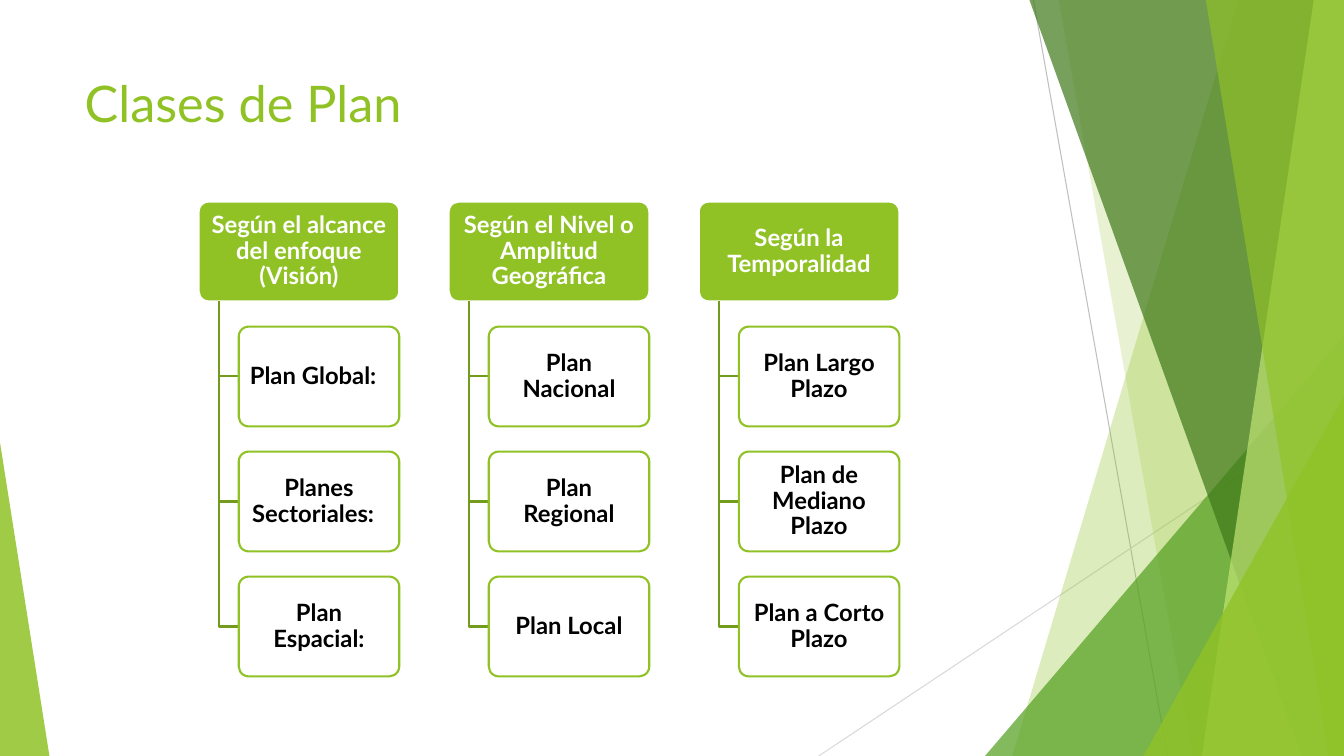
from collections import namedtuple
from dataclasses import dataclass

from lxml.etree import SubElement
from pptx import Presentation
from pptx.dml.color import RGBColor
from pptx.enum.shapes import MSO_CONNECTOR, MSO_SHAPE
from pptx.enum.text import MSO_ANCHOR, PP_ALIGN
from pptx.oxml.ns import qn
from pptx.util import Inches, Pt

Box = namedtuple("Box", "left top width height")


@dataclass(frozen=True)
class Theme:
    """Colours, font and type sizes of the slide."""
    font: str = "Lato"
    green: str = "90C226"
    leaf: str = "54A021"
    forest: str = "3F7819"
    lime: str = "C0E474"
    branch: str = "739B1E"
    white: str = "FFFFFF"
    black: str = "000000"
    ray_dark: str = "BFBFBF"
    ray_light: str = "D9D9D9"
    title_size: int = 36
    label_size: int = 17
    ray_width: float = 0.75
    border_width: float = 1.5


THEME = Theme()

PLAN_CLASSES = [
    ("Según el alcance del enfoque (Visión)",
     ["Plan Global:  ", "Planes Sectoriales:  ", "Plan Espacial:"]),
    ("Según el Nivel o Amplitud Geográfica",
     ["Plan Nacional", "Plan Regional", "Plan Local"]),
    ("Según la Temporalidad",
     ["Plan Largo Plazo", "Plan de Mediano Plazo", "Plan a Corto Plazo"]),
]


def apply(target, formats):
    """Set each attribute in formats on target."""
    for name, value in formats.items():
        setattr(target, name, value)


def paint(shape, colour, opacity=100):
    """Fill a shape with a colour at an opacity in percent."""
    shape.shadow.inherit = False
    shape.fill.solid()
    shape.fill.fore_color.rgb = RGBColor.from_string(colour)
    if opacity < 100:
        tint = shape._element.spPr.find(qn("a:solidFill")).find(qn("a:srgbClr"))
        SubElement(tint, qn("a:alpha")).set("val", str(opacity * 1000))


def stroke(shape, colour, width):
    """Give a shape or connector a solid line."""
    shape.line.color.rgb = RGBColor.from_string(colour)
    shape.line.width = Pt(width)


def outline(shapes, points, close):
    """Draw a freeform through points given in inches."""
    corners = [(Inches(x), Inches(y)) for x, y in points]
    builder = shapes.build_freeform(*corners[0], scale=1.0)
    builder.add_line_segments(corners[1:], close=close)
    return builder.convert_to_shape()


def preset(shapes, kind, box, adjustment):
    """Add an adjustable preset shape in a box given in inches."""
    shape = shapes.add_shape(kind, *map(Inches, box))
    shape.adjustments[0] = adjustment
    return shape


def add_ray(shapes, start, end, colour):
    """Draw one thin background line."""
    ray = shapes.add_connector(MSO_CONNECTOR.STRAIGHT, *map(Inches, start + end))
    stroke(ray, colour, THEME.ray_width)
    SubElement(ray._element.spPr, qn("a:effectLst"))


def add_band(shapes, box, top_left, top_right, bottom_left, colour, opacity):
    """Draw a translucent band that reaches the right edge of the box."""
    right, bottom = box.left + box.width, box.top + box.height
    band = outline(shapes, [(box.left + top_left, box.top), (box.left + top_right, box.top),
                            (right, bottom), (box.left + bottom_left, bottom)], True)
    paint(band, colour, opacity)
    band.line.fill.background()


def add_peak(shapes, box, left, width, height, apex, colour, opacity):
    """Draw a translucent triangle standing on the bottom of the box."""
    peak = preset(shapes, MSO_SHAPE.ISOSCELES_TRIANGLE,
                  Box(box.left + left, box.top + box.height - height, width, height), apex)
    paint(peak, colour, opacity)
    peak.line.fill.background()


def add_facets(shapes, box):
    """Draw the faceted green background over the box."""
    right, bottom = box.left + box.width, box.top + box.height
    add_ray(shapes, (box.left + 10.25, box.top), (box.left + 11.58, bottom), THEME.ray_dark)
    add_ray(shapes, (right, box.top + 4.03), (box.left + 8.12, bottom), THEME.ray_light)
    facets = [
        (add_band, 12.28, box.width, 10.04, THEME.green, 30),
        (add_band, 10.5, box.width, 11.83, THEME.green, 20),
        (add_peak, 9.77, 3.56, 4.17, 1, THEME.leaf, 72),
        (add_band, 10.21, box.width, 12.91, THEME.forest, 70),
        (add_band, 13.03, box.width, 11.92, THEME.lime, 70),
        (add_band, 11.96, box.width, 13.18, THEME.green, 65),
        (add_peak, 11.34, 1.99, 3.57, 1, THEME.green, 80),
        (add_peak, 0, 0.49, 3.11, 0, THEME.green, 85),
    ]
    for draw, *measures in facets:
        draw(shapes, box, *measures)


def add_title(slide, box, wording):
    """Place the slide title in the box."""
    title = slide.shapes.title
    apply(title, dict(zip(Box._fields, map(Inches, box))))
    title.text_frame.text = wording
    apply(title.text_frame, {"vertical_anchor": MSO_ANCHOR.TOP, "word_wrap": True})
    heading = title.text_frame.paragraphs[0]
    heading.alignment = PP_ALIGN.LEFT
    apply(heading.runs[0].font, {"name": THEME.font, "size": Pt(THEME.title_size)})
    heading.runs[0].font.color.rgb = RGBColor.from_string(THEME.green)


def add_card(shapes, box, wording, fill, border, ink, opacity=100):
    """Draw a rounded card with a centred bold label."""
    card = preset(shapes, MSO_SHAPE.ROUNDED_RECTANGLE, box, 0.1)
    paint(card, fill, opacity)
    stroke(card, border, THEME.border_width)
    frame = card.text_frame
    apply(frame, {
        "word_wrap": True, "vertical_anchor": MSO_ANCHOR.MIDDLE,
        "margin_left": Inches(0.07), "margin_right": Inches(0.07),
        "margin_top": Inches(0.05), "margin_bottom": Inches(0.05),
    })
    label = frame.paragraphs[0]
    apply(label, {"alignment": PP_ALIGN.CENTER, "line_spacing": 0.9})
    run = label.add_run()
    run.text = wording
    apply(run.font, {"name": THEME.font, "size": Pt(THEME.label_size), "bold": True})
    run.font.color.rgb = RGBColor.from_string(ink)


def add_plan_class(shapes, box, heading, plans):
    """Draw one heading with its plans branching below it."""
    indent = box.width / 5
    pitch = (box.height + 0.25) / (len(plans) + 1)
    height = pitch - 0.25
    add_card(shapes, Box(box.left, box.top, box.width, height), heading,
             THEME.green, THEME.white, THEME.white)
    trunk = box.left + indent / 2
    for row, plan in enumerate(plans, start=1):
        top = box.top + row * pitch
        middle = top + height / 2
        branch = outline(shapes, [(trunk, box.top + height), (trunk, middle),
                                  (box.left + indent, middle)], False)
        branch.shadow.inherit = False
        branch.fill.background()
        stroke(branch, THEME.branch, THEME.border_width)
        add_card(shapes, Box(box.left + indent, top, box.width - indent, height), plan,
                 THEME.white, THEME.green, THEME.black, 90)


def add_hierarchy(shapes, box):
    """Spread the plan classes in equal columns over the box."""
    width = 1.99
    pitch = (box.width - width) / (len(PLAN_CLASSES) - 1)
    for column, (heading, plans) in enumerate(PLAN_CLASSES):
        add_plan_class(shapes, Box(box.left + column * pitch, box.top, width, box.height),
                       heading, plans)


def main():
    """Build and save the slide."""
    deck = Presentation()
    page = Box(0, 0, 13.33, 7.5)
    apply(deck, {"slide_width": Inches(page.width), "slide_height": Inches(page.height)})
    slide = deck.slides.add_slide(deck.slide_layouts[5])
    add_facets(slide.shapes, page)
    add_title(slide, Box(0.74, 0.67, 9.4, 1.44), "Clases de Plan")
    add_hierarchy(slide.shapes, Box(1.97, 2, 6.95, 4.71))
    deck.save("out.pptx")


if __name__ == "__main__":
    main()
